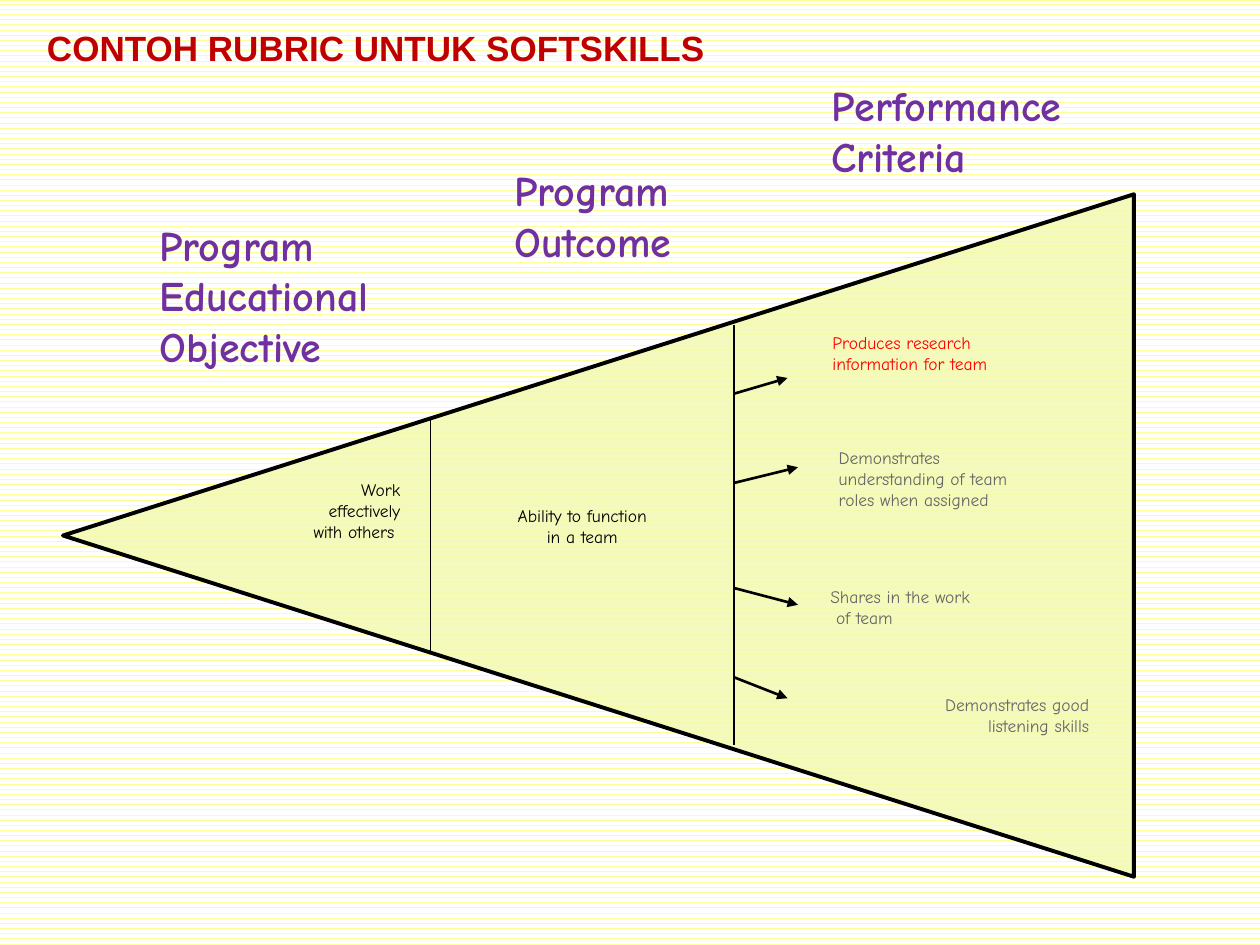
import pptx
import pptx.util
from pptx.dml.color import RGBColor
from pptx.enum.dml import MSO_PATTERN
from pptx.enum.shapes import MSO_CONNECTOR, MSO_SHAPE
from pptx.enum.text import MSO_AUTO_SIZE, PP_ALIGN
from pptx.oxml.ns import qn
from lxml import etree

WHITE = RGBColor(0xFF, 0xFF, 0xFF)
PALE_YELLOW = RGBColor(0xFF, 0xFF, 0x99)
LIME = RGBColor(0xF2, 0xF9, 0xAD)
BLACK = RGBColor(0, 0, 0)
PURPLE = RGBColor(0x70, 0x30, 0xA0)
DARK_RED = RGBColor(0xC0, 0, 0)
RED = RGBColor(0xFF, 0, 0)
GREY = RGBColor(0x66, 0x66, 0x66)

HAND_FONT = "Comic Neue"
COLUMNS, ROWS = 120, 90
CELL = pptx.util.Inches(10) / COLUMNS
OUTCOME_EDGE = 69.9
CRITERIA_WIDTH = 26.8


def grid(*cells):
    """Turn counts of grid cells into slide lengths."""
    return [round(cell * CELL) for cell in cells]


def add_text(page, place, lines, size, color, bold=False, font=HAND_FONT,
             align=PP_ALIGN.LEFT, wrap=False, grow=False):
    box = page.shapes.add_textbox(*grid(*place))
    frame = box.text_frame
    frame.word_wrap = wrap
    frame.auto_size = MSO_AUTO_SIZE.SHAPE_TO_FIT_TEXT if grow else MSO_AUTO_SIZE.NONE
    frame.text = "\n".join(lines)
    for para in frame.paragraphs:
        para.alignment = align
        for span in para.runs:
            span.font.name = font
            span.font.size = pptx.util.Pt(size)
            span.font.bold = bold
            span.font.color.rgb = color


def add_line(page, start, end, width, arrow=False):
    line = page.shapes.add_connector(MSO_CONNECTOR.STRAIGHT, *grid(*start, *end))
    line.line.color.rgb = BLACK
    line.line.width = pptx.util.Pt(width)
    if arrow:
        outline = line.line._get_or_add_ln()
        etree.SubElement(outline, qn("a:tailEnd"), type="triangle")
    etree.SubElement(line._element.spPr, qn("a:effectLst"))


def add_cone(page, left, top, width, height):
    """Add a translucent triangle whose tip points left."""
    place = (left + (width - height) / 2, top + (height - width) / 2, height, width)
    cone = page.shapes.add_shape(MSO_SHAPE.ISOSCELES_TRIANGLE, *grid(*place))
    cone.rotation = 270
    cone.shadow.inherit = False
    cone.fill.solid()
    cone.fill.fore_color.rgb = LIME
    color = cone._element.spPr.find(qn("a:solidFill"))[0]
    etree.SubElement(color, qn("a:alpha"), val="80000")
    cone.line.color.rgb = BLACK
    cone.line.width = pptx.util.Pt(2.25)


def set_background(page):
    fill = page.background.fill
    fill.patterned()
    fill.pattern = MSO_PATTERN.DARK_HORIZONTAL
    fill.fore_color.rgb = WHITE
    fill.back_color.rgb = PALE_YELLOW


def main():
    deck = pptx.Presentation()
    deck.slide_width, deck.slide_height = grid(COLUMNS, ROWS)
    page = deck.slides.add_slide(deck.slide_layouts[6])
    set_background(page)

    headings = [
        ((14, 20.3, 25, 15.7), "Program Educational Objective"),
        ((47.8, 15.1, 20.2, 10.9), "Program Outcome"),
        ((78, 7, 28, 10.9), "Performance Criteria"),
    ]
    for place, heading in headings:
        add_text(page, place, [heading], 24, PURPLE, bold=True, wrap=True, grow=True)

    add_cone(page, 6, 18.5, 102, 65)
    for column, top, bottom in [(41, 40, 62), (OUTCOME_EDGE, 31, 71)]:
        add_line(page, (column, top), (column, bottom), 0.75)

    criteria = [
        (78.1, 31, 8, ["Produces research", "information for team"], RED, PP_ALIGN.LEFT),
        (78.7, 42, 11, ["Demonstrates", "understanding of team", "roles when assigned"],
         GREY, PP_ALIGN.LEFT),
        (77.9, 55.2, 8, ["Shares in the work", " of team"], GREY, PP_ALIGN.LEFT),
        (78.1, 65.5, 7, ["Demonstrates good", "listening skills"], GREY, PP_ALIGN.RIGHT),
    ]
    for left, top, height, lines, color, align in criteria:
        add_text(page, (left, top, CRITERIA_WIDTH, height), lines, 10, color, align=align)

    arrows = [(37.5, 75, 36), (46, 76, 44.5), (56, 76, 57.6), (64.5, 75, 66.5)]
    for start_row, end_column, end_row in arrows:
        add_line(page, (OUTCOME_EDGE, start_row), (end_column, end_row), 1.5, arrow=True)

    add_text(page, (43.1, 47.5, 24.7, 8), ["Ability to function", "in a team"],
             10, BLACK, align=PP_ALIGN.CENTER)
    add_text(page, (20.3, 45, 19, 10.5), ["Work", "effectively", "with others "],
             10, BLACK, align=PP_ALIGN.RIGHT)
    add_text(page, (3, 1.9, 65.6, 5.3), ["CONTOH RUBRIC UNTUK SOFTSKILLS"], 20, DARK_RED,
             bold=True, font="Arial", align=PP_ALIGN.CENTER, grow=True)

    deck.save("out.pptx")


if __name__ == "__main__":
    main()
